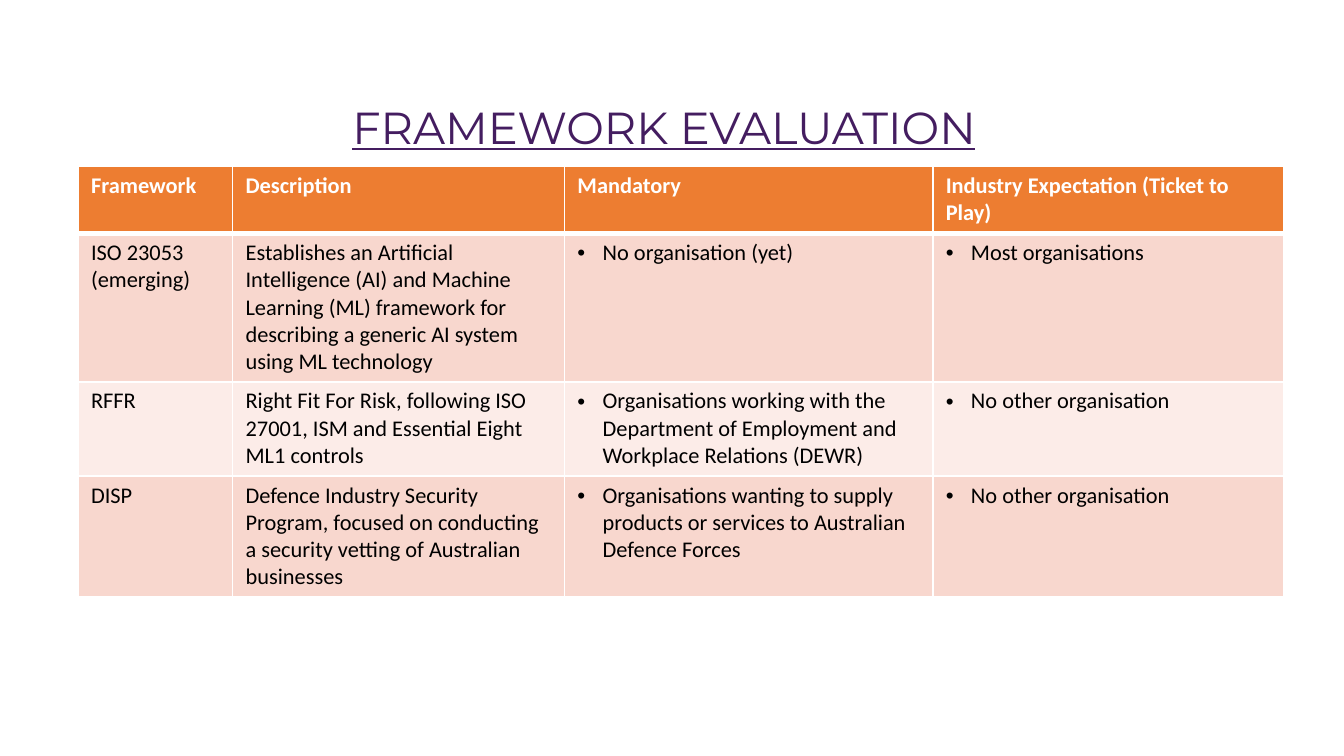
from dataclasses import dataclass

import lxml.etree
import pptx
import pptx.dml.color
import pptx.enum.text
import pptx.oxml
import pptx.oxml.ns
import pptx.util

Pt = pptx.util.Pt
qn = pptx.oxml.ns.qn


@dataclass(frozen=True)
class Theme:
    title_font: str = "Montserrat"
    body_font: str = "Calibri"
    title_size: float = 24
    body_size: float = 12
    title: str = "441D60"
    header: str = "ED7D31"
    bands: tuple[str, str] = ("F8D7CE", "FCECE8")
    white: str = "FFFFFF"
    black: str = "000000"
    rule: float = 1
    header_rule: float = 3


@dataclass(frozen=True)
class Framework:
    name: str
    description: str
    mandatory: str
    expectation: str
    height: float

    def texts(self) -> list[str]:
        return [self.name, self.description, self.mandatory, self.expectation]


THEME = Theme()
COLUMN_WIDTHS = [82.8, 177.8, 197.3, 187.9]
BULLET_COLUMNS = (2, 3)
BULLET_INDENT = 13.5
ROWS = [
    Framework("Framework", "Description", "Mandatory",
              "Industry Expectation (Ticket to Play)", 36),
    Framework("ISO 23053 (emerging)",
              "Establishes an Artificial Intelligence (AI) and Machine Learning (ML) "
              "framework for describing a generic AI system using ML technology",
              "No organisation (yet)", "Most organisations", 79),
    Framework("RFFR",
              "Right Fit For Risk, following ISO 27001, ISM and Essential Eight ML1 controls",
              "Organisations working with the Department of Employment and "
              "Workplace Relations (DEWR)",
              "No other organisation", 50.4),
    Framework("DISP",
              "Defence Industry Security Program, focused on conducting a security "
              "vetting of Australian businesses",
              "Organisations wanting to supply products or services to Australian "
              "Defence Forces",
              "No other organisation", 65),
]


def rgb(value: str) -> pptx.dml.color.RGBColor:
    return pptx.dml.color.RGBColor.from_string(value)


def format_run(r, font: str, size: float, color: str, bold: bool = False) -> None:
    r.font.name = font
    r.font.size = Pt(size)
    r.font.bold = bold
    r.font.color.rgb = rgb(color)


def set_borders(cell, color: str, widths: dict[str, float]) -> None:
    tc_pr = cell._tc.get_or_add_tcPr()
    for i, (side, width) in enumerate(widths.items()):
        ln = lxml.etree.Element(qn(f"a:ln{side}"), w=str(Pt(width)))
        fill = lxml.etree.SubElement(ln, qn("a:solidFill"))
        lxml.etree.SubElement(fill, qn("a:srgbClr"), val=color)
        tc_pr.insert(i, ln)


def add_bullet(p, indent: float) -> None:
    p_pr = p._p.get_or_add_pPr()
    p_pr.set("marL", str(Pt(indent)))
    p_pr.set("indent", str(-Pt(indent)))
    lxml.etree.SubElement(p_pr, qn("a:buFont"), typeface="Arial")
    lxml.etree.SubElement(p_pr, qn("a:buChar"), char="•")


def fill_cell(cell, text: str, row: int, column: int) -> None:
    header = row == 0
    cell.margin_left = cell.margin_right = Pt(7)
    cell.margin_top = cell.margin_bottom = Pt(3.2)
    cell.vertical_anchor = pptx.enum.text.MSO_ANCHOR.TOP
    cell.fill.solid()
    cell.fill.fore_color.rgb = rgb(THEME.header if header else THEME.bands[(row - 1) % 2])
    set_borders(cell, THEME.white, {
        "L": THEME.rule,
        "R": THEME.rule,
        "T": THEME.header_rule if row == 1 else THEME.rule,
        "B": THEME.header_rule if header else THEME.rule,
    })
    cell.text_frame.text = text
    p = cell.text_frame.paragraphs[0]
    if not header and column in BULLET_COLUMNS:
        add_bullet(p, BULLET_INDENT)
    format_run(p.runs[0], THEME.body_font, THEME.body_size,
               THEME.white if header else THEME.black, header)


def add_title(s, text: str) -> None:
    sp = s.shapes.title
    sp.left, sp.top, sp.width, sp.height = Pt(24.5), Pt(49.7), Pt(662.4), Pt(36)
    tf = sp.text_frame
    tf.text = text
    tf.word_wrap = True
    tf.vertical_anchor = pptx.enum.text.MSO_ANCHOR.MIDDLE
    p = tf.paragraphs[0]
    p.alignment = pptx.enum.text.PP_ALIGN.CENTER
    r = p.runs[0]
    format_run(r, THEME.title_font, THEME.title_size, THEME.title)
    r.font.underline = True


def add_framework_table(s, rows: list[Framework]) -> None:
    table = s.shapes.add_table(
        len(rows), len(COLUMN_WIDTHS), Pt(41.8), Pt(89),
        Pt(sum(COLUMN_WIDTHS)), Pt(sum(row.height for row in rows))).table
    for column, width in zip(table.columns, COLUMN_WIDTHS):
        column.width = Pt(width)
    for i, row in enumerate(rows):
        table.rows[i].height = Pt(row.height)
        for j, text in enumerate(row.texts()):
            fill_cell(table.cell(i, j), text, i, j)


def main() -> None:
    prs = pptx.Presentation()
    prs.slide_width, prs.slide_height = Pt(720), Pt(405)
    s = prs.slides.add_slide(prs.slide_layouts[5])
    add_title(s, "FRAMEWORK EVALUATION")
    add_framework_table(s, ROWS)
    prs.save("out.pptx")


if __name__ == "__main__":
    main()
